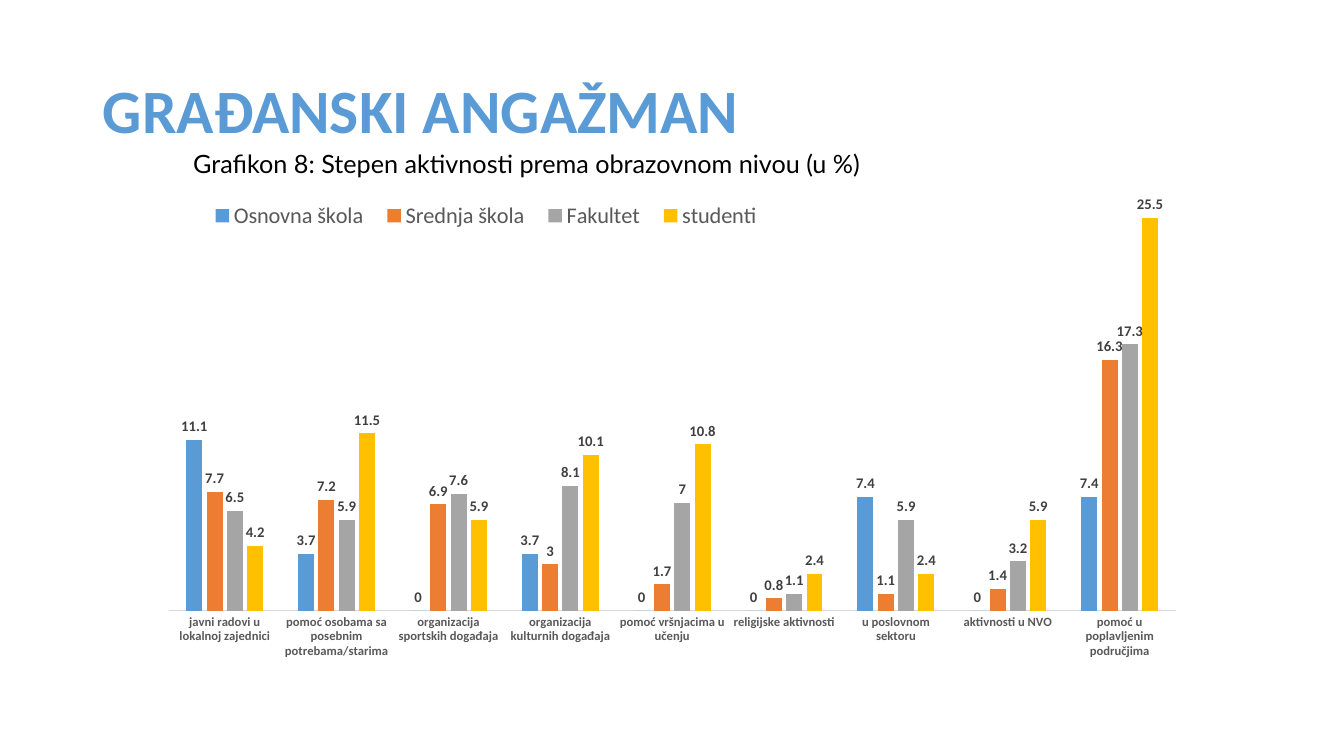
"""Build the slide on civic engagement by level of education."""
from dataclasses import dataclass
from typing import Any

from lxml import etree
from pptx import Presentation
from pptx import util as u
from pptx.chart.data import CategoryChartData
from pptx.dml.color import RGBColor
from pptx.enum import chart as ch, text
from pptx.oxml.ns import qn

BLUE = RGBColor(0x5B, 0x9B, 0xD5)
ORANGE = RGBColor(0xED, 0x7D, 0x31)
GREY = RGBColor(0xA5, 0xA5, 0xA5)
GOLD = RGBColor(0xFF, 0xC0, 0x00)
BLACK = RGBColor(0, 0, 0)
DARK = RGBColor(0x40, 0x40, 0x40)
SLATE = RGBColor(0x59, 0x59, 0x59)
PALE = RGBColor(0xD9, 0xD9, 0xD9)


@dataclass
class Group:
    name: str
    color: RGBColor
    rates: tuple[float, ...]


@dataclass
class Frame:
    x: float
    y: float
    w: float
    h: float


ACTS = (
    "javni radovi u lokalnoj zajednici",
    "pomoć osobama sa posebnim potrebama/starima",
    "organizacija sportskih događaja",
    "organizacija kulturnih događaja",
    "pomoć vršnjacima u učenju",
    "religijske aktivnosti",
    "u poslovnom sektoru",
    "aktivnosti u NVO",
    "pomoć u poplavljenim područjima",
)
GROUPS = (
    Group("Osnovna škola", BLUE, (11.1, 3.7, 0, 3.7, 0, 0, 7.4, 0, 7.4)),
    Group("Srednja škola", ORANGE, (7.7, 7.2, 6.9, 3, 1.7, 0.8, 1.1, 1.4, 16.3)),
    Group("Fakultet", GREY, (6.5, 5.9, 7.6, 8.1, 7, 1.1, 5.9, 3.2, 17.3)),
    Group("studenti", GOLD, (4.2, 11.5, 5.9, 10.1, 10.8, 2.4, 2.4, 5.9, 25.5)),
)
TITLE = Frame(2.34, 1.02, 29.21, 3.68)
CHART = Frame(4.24, 3.61, 25.4, 13.54)
NOTE = Frame(4.62, 3.61, 24.38, 1.02)
PLOT = Frame(0, 0.01, 1, 0.86)
KEY = Frame(0.03, 0.1, 0.57, 0.07)


def apply(obj: Any, form: dict[str, Any]) -> None:
    for key, val in form.items():
        setattr(obj, key, val)


def style(font: Any, size: float, color: RGBColor,
          bold: bool = False, name: str = "Calibri") -> None:
    apply(font, {"size": u.Pt(size), "bold": bold, "name": name})
    font.color.rgb = color


def span(box: Frame) -> list[int]:
    return [u.Cm(n) for n in (box.x, box.y, box.w, box.h)]


def place(host: Any, spot: int, box: Frame, inner: bool = False) -> None:
    for old in host.findall(qn("c:layout")):
        host.remove(old)
    lay = etree.Element(qn("c:layout"))
    man = etree.SubElement(lay, qn("c:manualLayout"))
    marks = {"layoutTarget": "inner"} if inner else {}
    marks |= {"xMode": "edge", "yMode": "edge",
              "x": box.x, "y": box.y, "w": box.w, "h": box.h}
    for tag, val in marks.items():
        etree.SubElement(man, qn(f"c:{tag}")).set("val", str(val))
    host.insert(spot, lay)


def add_title(slide: Any) -> None:
    title = slide.shapes.title
    apply(title, dict(zip(("left", "top", "width", "height"), span(TITLE))))
    apply(title.text_frame, {
        "text": "GRAĐANSKI ANGAŽMAN",
        "auto_size": text.MSO_AUTO_SIZE.NONE,
        "vertical_anchor": text.MSO_ANCHOR.MIDDLE,
    })
    para = title.text_frame.paragraphs[0]
    apply(para, {"alignment": text.PP_ALIGN.LEFT, "line_spacing": 0.9})
    style(para.runs[0].font, 44, BLUE, True)


def add_chart(slide: Any) -> None:
    data = CategoryChartData()
    data.categories = ACTS
    for group in GROUPS:
        data.add_series(group.name, group.rates)
    chart = slide.shapes.add_chart(
        ch.XL_CHART_TYPE.COLUMN_CLUSTERED, *span(CHART), data).chart
    apply(chart, {"has_title": False, "has_legend": True})
    style(chart.font, 10, BLACK)
    apply(chart.legend, {"position": ch.XL_LEGEND_POSITION.BOTTOM,
                         "include_in_layout": False})
    style(chart.legend.font, 16, SLATE)
    apply(chart.value_axis, {"visible": False, "has_major_gridlines": False,
                             "minimum_scale": 0, "maximum_scale": 30})
    axis = chart.category_axis
    apply(axis, {"major_tick_mark": ch.XL_TICK_MARK.NONE,
                 "has_major_gridlines": False})
    style(axis.tick_labels.font, 9, SLATE, True)
    axis.format.line.color.rgb = PALE
    axis.format.line.width = u.Pt(0.75)
    plot = chart.plots[0]
    apply(plot, {"gap_width": 219, "overlap": -27, "vary_by_categories": False})
    for bars, group in zip(plot.series, GROUPS):
        bars.format.fill.solid()
        bars.format.fill.fore_color.rgb = group.color
        apply(bars.data_labels, {
            "show_value": True,
            "position": ch.XL_LABEL_POSITION.OUTSIDE_END,
        })
        style(bars.data_labels.font, 10.5, DARK, True)
    place(chart.element.find(".//" + qn("c:plotArea")), 0, PLOT, True)
    place(chart.element.find(".//" + qn("c:legend")), 1, KEY)


def add_note(slide: Any) -> None:
    frame = slide.shapes.add_textbox(*span(NOTE)).text_frame
    apply(frame, {
        "word_wrap": True,
        "auto_size": text.MSO_AUTO_SIZE.SHAPE_TO_FIT_TEXT,
        "text": "Grafikon 8: Stepen aktivnosti prema obrazovnom nivou (u %)",
    })
    style(frame.paragraphs[0].runs[0].font, 18, BLACK, name="Lato")


def main() -> None:
    deck = Presentation()
    apply(deck, {"slide_width": u.Cm(33.87), "slide_height": u.Cm(19.05)})
    slide = deck.slides.add_slide(deck.slide_layouts[5])
    add_title(slide)
    add_chart(slide)
    add_note(slide)
    deck.save("out.pptx")


if __name__ == "__main__":
    main()
